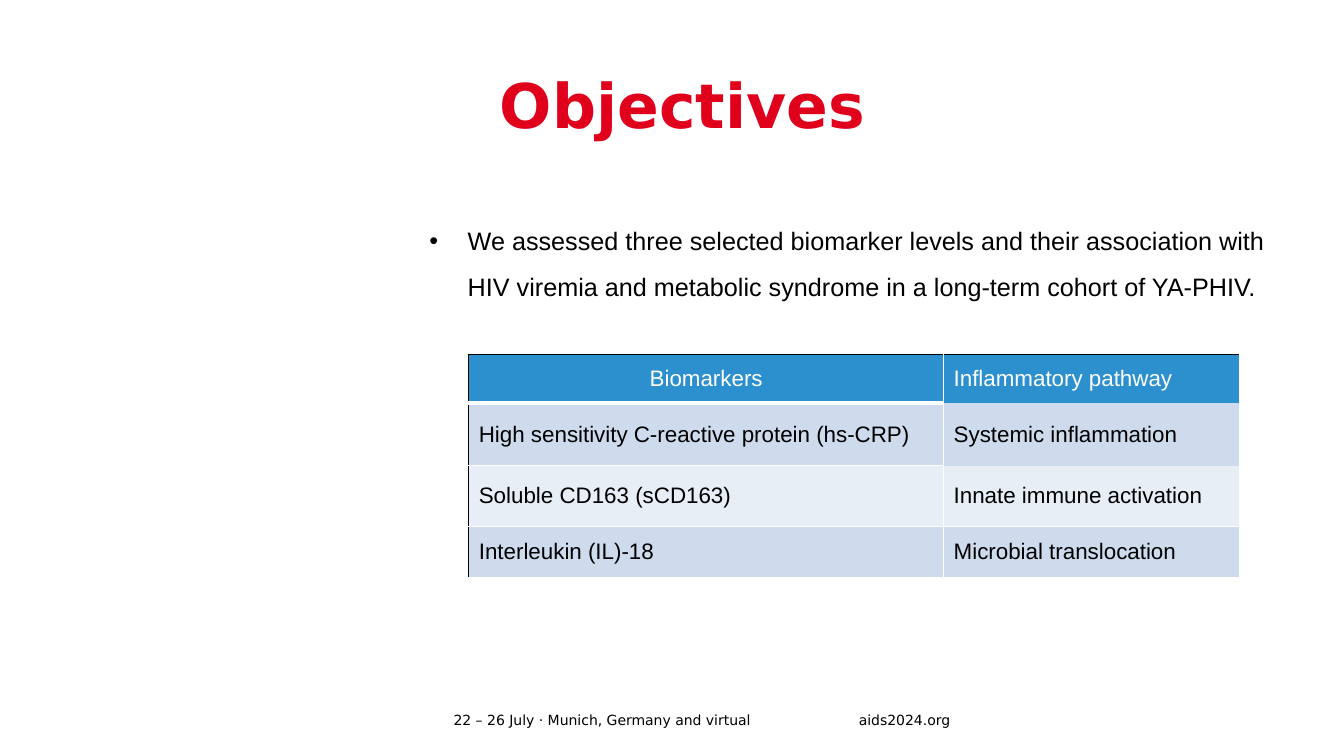
from dataclasses import dataclass

from lxml import etree
from pptx import Presentation
from pptx.dml.color import RGBColor
from pptx.enum.text import MSO_ANCHOR, PP_ALIGN
from pptx.oxml.ns import qn
from pptx.util import Inches, Pt

TOP, MID = MSO_ANCHOR.TOP, MSO_ANCHOR.MIDDLE
LEFT, CENTER = PP_ALIGN.LEFT, PP_ALIGN.CENTER
SANS, ARIAL = "DejaVu Sans", "Arial"
BLACK, WHITE, RED = "000000", "FFFFFF", "E0001B"
BLUE, PALE, LIGHT = "2C90CF", "CDDBED", "E8EEF6"


@dataclass
class Label:
    """A text box; its place is in percent of the slide."""
    text: str
    x: float
    y: float
    w: float
    h: float
    size: int
    font: str = SANS
    color: str = BLACK
    bold: bool = False
    anchor: MSO_ANCHOR = MID
    space: float = 1.0
    bullet: bool = False


@dataclass
class Rule:
    """A line between table cells."""
    color: str
    width: float


LABELS = [
    Label("22 – 26 July · Munich, Germany and virtual", 33.75, 93.6, 30.15, 3.2, 10),
    Label("aids2024.org", 63.9, 93.6, 14.48, 3.2, 10),
    Label("Objectives", 37.2, 10, 42.75, 9.47, 44, color=RED, bold=True,
          anchor=TOP, space=0.9),
    Label("We assessed three selected biomarker levels and their association with "
          "HIV viremia and metabolic syndrome in a long-term cohort of YA-PHIV.",
          31.95, 27.87, 65.63, 56.8, 18, ARIAL, anchor=TOP, space=1.5, bullet=True),
]
ROWS = [
    ("Biomarkers", "Inflammatory pathway"),
    ("High sensitivity C-reactive protein (hs-CRP)", "Systemic inflammation"),
    ("Soluble CD163 (sCD163)", "Innate immune activation"),
    ("Interleukin (IL)-18", "Microbial translocation"),
]
FILLS = [BLUE, PALE, LIGHT, PALE]
WIDTHS = [35.33, 22.05]
HEIGHTS = [6.4, 8.27, 8, 6.8]
DARK, THIN, THICK = Rule(BLACK, 1), Rule(WHITE, 1), Rule(WHITE, 3)
UPRIGHT = [DARK, THIN, THIN]
LEVEL = [[DARK, THICK, THIN, THIN, THIN], [DARK, None, None, THIN, THIN]]

deck = Presentation()
deck.slide_width, deck.slide_height = Inches(13.33), Inches(7.5)
slide = deck.slides.add_slide(deck.slide_layouts[6])


def across(share: float) -> int:
    return round(deck.slide_width * share / 100)


def down(share: float) -> int:
    return round(deck.slide_height * share / 100)


def paint(target, color: str) -> None:
    """Give a fill or a font a solid colour."""
    if hasattr(target, "solid"):
        target.solid()
        target = target.fore_color
    else:
        target = target.color
    target.rgb = RGBColor.from_string(color)


def style(para, size: int, font: str, color: str, bold: bool = False) -> None:
    for run in para.runs:
        run.font.size, run.font.name, run.font.bold = Pt(size), font, bold
        paint(run.font, color)


def add_label(item: Label) -> None:
    box = slide.shapes.add_textbox(across(item.x), down(item.y),
                                   across(item.w), down(item.h))
    frame = box.text_frame
    frame.word_wrap, frame.vertical_anchor = True, item.anchor
    frame.margin_left = frame.margin_right = 0
    frame.margin_top = frame.margin_bottom = 0
    frame.text = item.text
    para = frame.paragraphs[0]
    para.line_spacing = item.space
    if item.bullet:
        props = para._p.get_or_add_pPr()
        props.set("marL", str(Inches(0.38)))
        props.set("indent", str(-Inches(0.38)))
        etree.SubElement(props, qn("a:buFont"), typeface=ARIAL)
        etree.SubElement(props, qn("a:buChar"), char="•")
    style(para, item.size, item.font, item.color, item.bold)


def add_edges(cell, edges: list[Rule | None]) -> None:
    """Set the left, right, top and bottom borders of a cell."""
    props = cell._tc.get_or_add_tcPr()
    for place, (side, rule) in enumerate(zip("LRTB", edges)):
        line = etree.Element(qn(f"a:ln{side}"))
        if rule:
            line.set("w", str(Pt(rule.width)))
            fill = etree.SubElement(line, qn("a:solidFill"))
            etree.SubElement(fill, qn("a:srgbClr"), val=rule.color)
        else:
            etree.SubElement(line, qn("a:noFill"))
        props.insert(place, line)


def add_grid() -> None:
    table = slide.shapes.add_table(
        len(ROWS), len(WIDTHS), across(34.88), down(46.93),
        across(sum(WIDTHS)), down(sum(HEIGHTS))).table
    for col, width in zip(table.columns, WIDTHS):
        col.width = across(width)
    for r, texts in enumerate(ROWS):
        table.rows[r].height = down(HEIGHTS[r])
        for c, text in enumerate(texts):
            cell = table.cell(r, c)
            cell.vertical_anchor = MID
            cell.text_frame.text = text
            para = cell.text_frame.paragraphs[0]
            para.alignment = CENTER if r == c == 0 else LEFT
            style(para, 16, ARIAL, BLACK if r else WHITE)
            paint(cell.fill, FILLS[r])
            add_edges(cell, UPRIGHT[c:c + 2] + LEVEL[c][r:r + 2])


def main() -> None:
    for item in LABELS:
        add_label(item)
    add_grid()
    deck.save("out.pptx")


if __name__ == "__main__":
    main()
